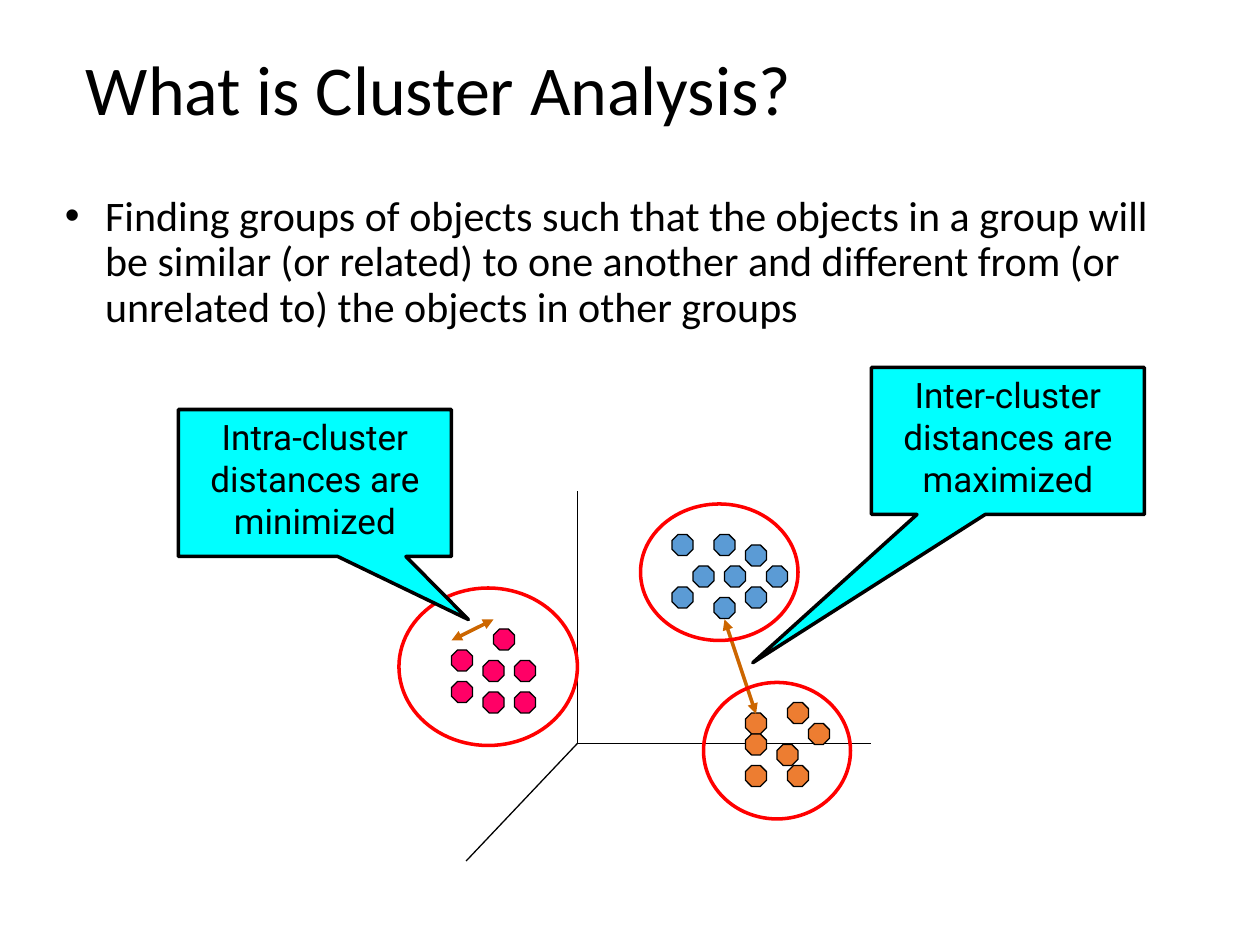
from lxml.etree import SubElement
from pptx import Presentation
from pptx.dml.color import RGBColor
from pptx.enum.shapes import MSO_CONNECTOR, MSO_SHAPE
from pptx.enum.text import MSO_ANCHOR, PP_ALIGN
from pptx.oxml.ns import qn
from pptx.util import Inches, Pt

TITLE = "What is Cluster Analysis?"
BODY = (
    "Finding groups of objects such that the objects in a group will be similar "
    "(or related) to one another and different from (or unrelated to) the objects "
    "in other groups"
)

CELLS_PER_INCH = 12
DOT_SIZE = 2
DOT_RAISE = 0.1
BLACK, RED, BROWN, CYAN = "000000", "FF0000", "CC6600", "00FFFF"

ORIGIN = (55, 70.8)
AXIS_ENDS = [(55, 46.8), (83, 70.8), (44.4, 82)]
CLUSTERS = [
    {"color": "5B9BD5", "dots": [(66, 54), (69, 54), (68, 51), (68, 57), (73, 54),
                                 (71, 52), (64, 51), (71, 56), (64, 56)]},
    {"color": "FF0066", "dots": [(43, 62), (46, 63), (46, 66), (49, 63), (47, 60),
                                 (49, 66), (43, 65)]},
    {"color": "ED7D31", "dots": [(71, 68), (77, 69), (74, 71), (71, 73), (75, 73),
                                 (71, 70), (75, 67)]},
]
RINGS = [(38, 56, 17, 15), (61, 48, 15, 13), (67, 65, 14, 13)]
INTER = {"text": "Inter-cluster distances are maximized", "box": (83, 35, 26, 14),
         "tip": (-0.935, 1.509), "arrow": ((72, 68), (69, 59))}
INTRA = {"text": "Intra-cluster distances are minimized", "box": (17, 39, 26, 14),
         "tip": (0.562, 0.929), "arrow": ((43, 61), (47, 59))}


def grid(*cells):
    return [Inches(cell / CELLS_PER_INCH) for cell in cells]


def color(value):
    return RGBColor.from_string(value)


def write(shape, text, size, font="Calibri", align=PP_ALIGN.LEFT,
          anchor=MSO_ANCHOR.TOP, spacing=1.0, bullet_indent=None):
    frame = shape.text_frame
    frame.word_wrap = True
    frame.vertical_anchor = anchor
    paragraph = frame.paragraphs[0]
    paragraph.alignment = align
    paragraph.line_spacing = spacing
    run = paragraph.add_run()
    run.text = text
    run.font.size = Pt(size)
    run.font.name = font
    run.font.color.rgb = color(BLACK)
    if bullet_indent:
        properties = paragraph._p.get_or_add_pPr()
        properties.set("marL", str(Inches(bullet_indent)))
        properties.set("indent", str(-Inches(bullet_indent)))
        SubElement(properties, qn("a:buFont"), typeface="Arial")
        SubElement(properties, qn("a:buChar"), char="•")


def add_shape(slide, kind, box, line, width, fill=None):
    shape = slide.shapes.add_shape(kind, *grid(*box))
    shape.shadow.inherit = False
    shape.line.color.rgb = color(line)
    shape.line.width = Pt(width)
    if fill:
        shape.fill.solid()
        shape.fill.fore_color.rgb = color(fill)
    else:
        shape.fill.background()
    return shape


def add_line(slide, start, end, line, width, arrows=False):
    connector = slide.shapes.add_connector(MSO_CONNECTOR.STRAIGHT, *grid(*start, *end))
    connector.line.color.rgb = color(line)
    connector.line.width = Pt(width)
    if arrows:
        for tag in ("a:headEnd", "a:tailEnd"):
            SubElement(connector.line._get_or_add_ln(), qn(tag), type="triangle")
    SubElement(connector._element.spPr, qn("a:effectLst"))


def add_distance(slide, distance):
    add_line(slide, *distance["arrow"], BROWN, 2, arrows=True)
    callout = add_shape(slide, MSO_SHAPE.RECTANGULAR_CALLOUT, distance["box"], BLACK, 2, CYAN)
    for index, value in enumerate(distance["tip"]):
        callout.adjustments[index] = value
    write(callout, distance["text"], 20, font="Roboto", align=PP_ALIGN.CENTER)


def main():
    presentation = Presentation()
    presentation.slide_width, presentation.slide_height = Inches(10), Inches(7.5)
    slide = presentation.slides.add_slide(presentation.slide_layouts[6])

    title = slide.shapes.add_textbox(*grid(7, 4, 108, 9.6))
    write(title, TITLE, 40, anchor=MSO_ANCHOR.MIDDLE, spacing=0.9)
    body = slide.shapes.add_textbox(*grid(5, 18, 108, 15))
    write(body, BODY, 24, spacing=0.9, bullet_indent=0.32)

    for end in AXIS_ENDS:
        add_line(slide, ORIGIN, end, BLACK, 0.75)
    for cluster in CLUSTERS:
        for column, row in cluster["dots"]:
            box = (column, row - DOT_RAISE, DOT_SIZE, DOT_SIZE)
            add_shape(slide, MSO_SHAPE.OCTAGON, box, BLACK, 0.75, cluster["color"])

    add_distance(slide, INTER)
    for ring in RINGS:
        add_shape(slide, MSO_SHAPE.OVAL, ring, RED, 2)
    add_distance(slide, INTRA)

    presentation.save("out.pptx")


if __name__ == "__main__":
    main()
